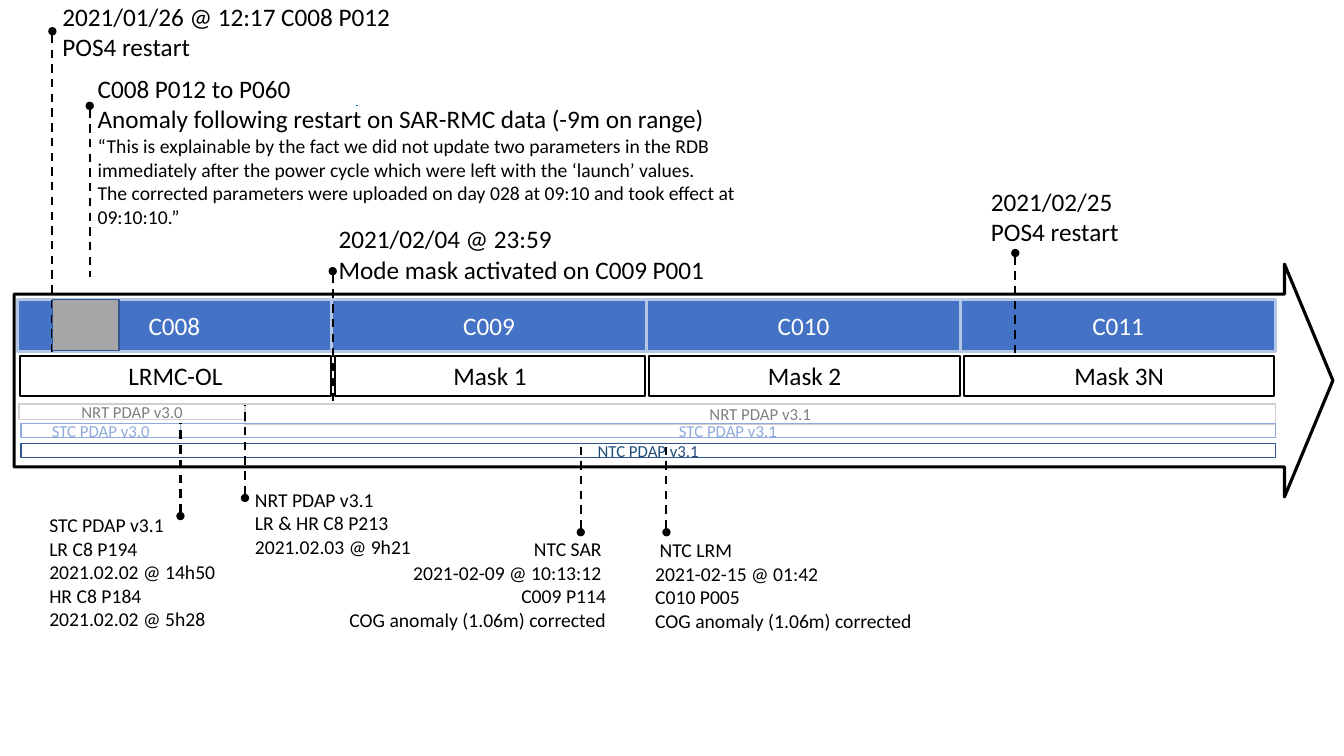
from pptx import Presentation
from pptx.dml.color import RGBColor
from pptx.enum import dml, shapes, text
from pptx.oxml.ns import qn
from pptx.util import Inches, Pt
from lxml import etree

THEME = {
    "font": "Calibri", "large": 18, "mid": 14, "small": 12,
    "black": "000000", "white": "FFFFFF", "blue": "4472C4", "pale": "B4C7E7",
    "gray": "A6A6A6", "edge": "325491", "tick": "0070C0",
    "nrt": "808080", "nrt_line": "D0CECE", "stc": "8FAADC",
    "ntc": "1F4E79", "ntc_line": "2F5597",
}
ALIGN = text.PP_ALIGN
ANCHOR = text.MSO_ANCHOR
BOX = shapes.MSO_SHAPE.RECTANGLE

deck = Presentation()
deck.slide_width, deck.slide_height = Inches(13.33), Inches(7.5)
slide = deck.slides.add_slide(deck.slide_layouts[6])


def write(shape, lines, color="black", align=ALIGN.LEFT, anchor=ANCHOR.TOP):
    """Fill a shape with (words, size) paragraphs."""
    frame = shape.text_frame
    frame.word_wrap, frame.vertical_anchor = True, anchor
    for i, (words, size) in enumerate(lines):
        par = frame.add_paragraph() if i else frame.paragraphs[0]
        par.alignment = align
        run = par.add_run()
        run.text = words
        form = {"name": THEME["font"], "size": Pt(THEME[size])}
        for key, value in form.items():
            setattr(run.font, key, value)
        run.font.color.rgb = RGBColor.from_string(THEME[color])


def block(at, fill, line, width, kind=BOX):
    """Add a flat shape; a fill of None leaves it clear."""
    shape = slide.shapes.add_shape(kind, *map(Inches, at))
    shape.shadow.inherit = False
    if fill:
        shape.fill.solid()
        shape.fill.fore_color.rgb = RGBColor.from_string(THEME[fill])
    else:
        shape.fill.background()
    shape.line.color.rgb = RGBColor.from_string(THEME[line])
    shape.line.width = Pt(width)
    return shape


# Timeline arrow
arrow = block((0.14, 2.62, 13.08, 2.31), "white", "black", 2.25,
              shapes.MSO_SHAPE.RIGHT_ARROW)
arrow.adjustments[0], arrow.adjustments[1] = 0.742, 0.208

# Cycles and their masks
step = 3.12
masks = ["LRMC-OL", "Mask 1", "Mask 2", "Mask 3N"]
for i, mask in enumerate(masks):
    left = 0.17 + i * step
    cycle = block((left, 2.97, step, 0.52), "blue", "pale", 2.25)
    write(cycle, [(f"C{8 + i:03}", "large")], "white", ALIGN.CENTER, ANCHOR.MIDDLE)
    cell = block((left + 0.03, 3.53, 3.08, 0.4), "white", "black", 1.5)
    write(cell, [(mask, "large")], "black", ALIGN.CENTER)

# Processing versions: label, left, top, right, height, fill, line, text
bars = [
    ("NRT PDAP v3.1", 2.43, 4.01, 12.65, 0.2, "white", "nrt_line", "nrt"),
    ("STC PDAP v3.1", 1.79, 4.2, 12.65, 0.14, None, "stc", "stc"),
    ("NTC PDAP v3.1", 0.21, 4.4, 12.65, 0.14, "white", "ntc_line", "ntc"),
    ("NRT PDAP v3.0", 0.19, 4.01, 2.43, 0.15, "white", "nrt_line", "nrt"),
    ("STC PDAP v3.0", 0.21, 4.2, 1.79, 0.14, None, "stc", "stc"),
]
for label, left, top, right, height, fill, line, color in bars:
    bar = block((left, top, right - left, height), fill, line, 1)
    write(bar, [(label, "small")], color, ALIGN.CENTER, ANCHOR.MIDDLE)

# Event pins, from the dot to the timeline, and one small tick: x, start, end, colour
pins = [
    (0.52, 0.31, 3.5, "black"), (0.89, 1.05, 2.75, "black"),
    (3.3, 2.69, 3.99, "black"), (10.07, 2.51, 3.51, "black"),
    (1.79, 5.12, 4.2, "black"), (2.43, 4.94, 4.02, "black"),
    (5.76, 5.28, 4.4, "black"), (6.61, 5.28, 4.4, "black"),
    (3.54, 1.04, 1.05, "tick"),
]
for x, start, end, color in pins:
    pin = slide.shapes.add_connector(
        shapes.MSO_CONNECTOR.STRAIGHT, *map(Inches, (x, start, x, end)))
    pin.line.color.rgb = RGBColor.from_string(THEME[color])
    pin.line.width = Pt(1.5)
    if color == "black":
        pin.line.dash_style = dml.MSO_LINE.DASH
        etree.SubElement(pin.line._get_or_add_ln(), qn("a:headEnd"), type="oval")
    etree.SubElement(pin._element.spPr, qn("a:effectLst"))

# Anomaly period
block((0.52, 2.97, 0.66, 0.51), "gray", "edge", 1)

# Event notes: place, alignment, large lines, mid lines
notes = [
    ((0.52, -0.04, 3.91, 0.71), ALIGN.LEFT,
     ["2021/01/26 @ 12:17 C008 P012", "POS4 restart"], []),
    ((0.87, 0.68, 6.64, 1.65), ALIGN.LEFT,
     ["C008 P012 to P060",
      "Anomaly following restart on SAR-RMC data (-9m on range)"],
     ["“This is explainable by the fact we did not update two parameters in the RDB "
      "immediately after the power cycle which were left with the ‘launch’ values.",
      "The corrected parameters were uploaded on day 028 at 09:10 and took effect at "
      "09:10:10.”"]),
    ((3.26, 2.17, 4.56, 0.71), ALIGN.LEFT,
     ["2021/02/04 @ 23:59", "Mode mask activated on C009 P001"], []),
    ((9.73, 1.8, 2.89, 0.71), ALIGN.LEFT, ["2021/02/25", "POS4 restart"], []),
    ((0.39, 5.04, 1.85, 1.28), ALIGN.LEFT, [],
     ["STC PDAP v3.1", "LR C8 P194 2021.02.02 @ 14h50",
      "HR C8 P184 2021.02.02 @ 5h28"]),
    ((2.43, 4.79, 1.85, 0.81), ALIGN.LEFT, [],
     ["NRT PDAP v3.1", "LR & HR C8 P213", "2021.02.03 @ 9h21"]),
    ((3.17, 5.28, 2.94, 1.04), ALIGN.RIGHT, [],
     [" NTC SAR ", "2021-02-09 @ 10:13:12 ", "C009 P114",
      "COG anomaly (1.06m) corrected"]),
    ((6.4, 5.29, 3.34, 1.04), ALIGN.LEFT, [],
     [" NTC LRM", "2021-02-15 @ 01:42", "C010 P005",
      "COG anomaly (1.06m) corrected"]),
]
for at, align, heads, rest in notes:
    note = slide.shapes.add_textbox(*map(Inches, at))
    lines = [(words, "large") for words in heads] + [(words, "mid") for words in rest]
    write(note, lines, align=align)

deck.save("out.pptx")
